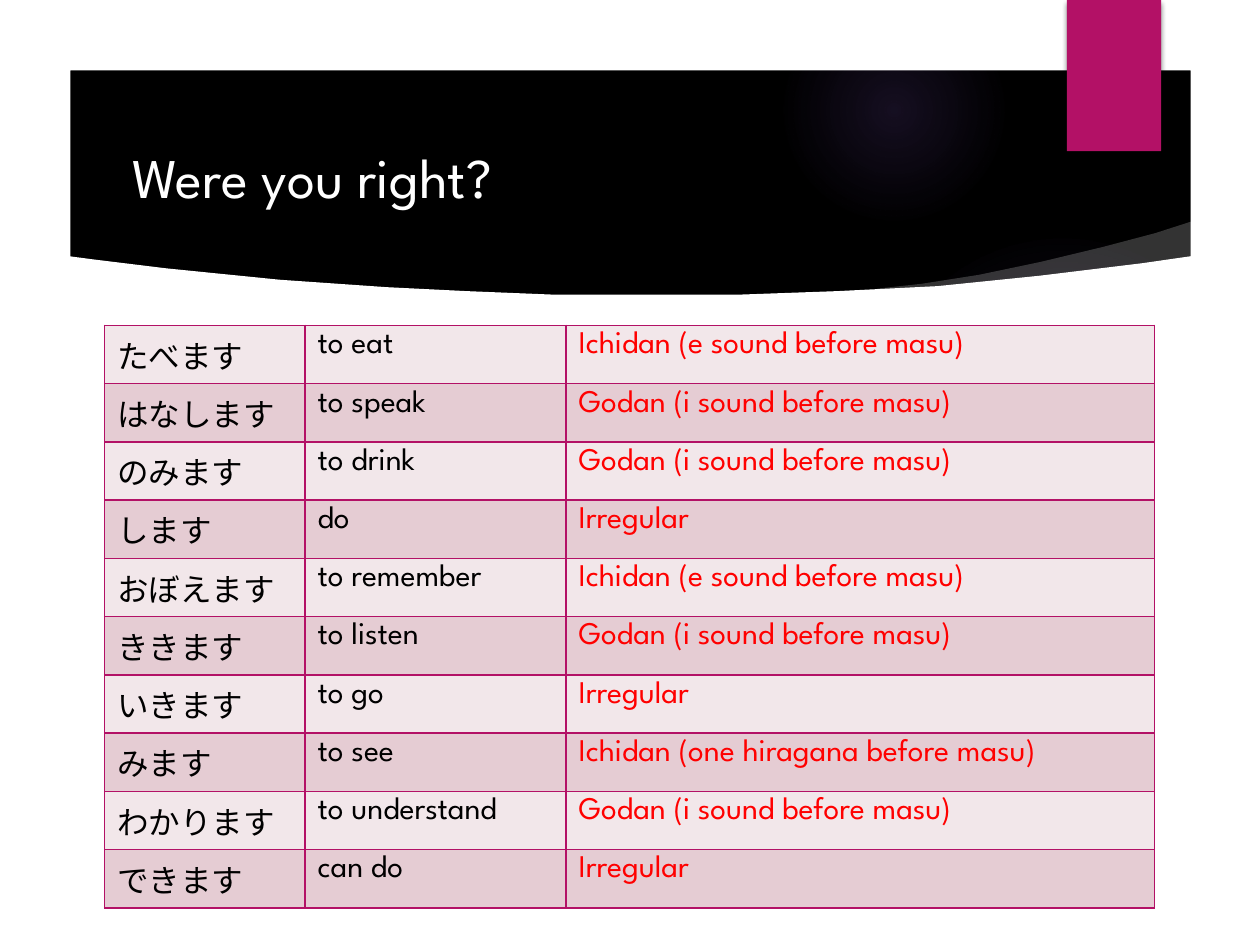
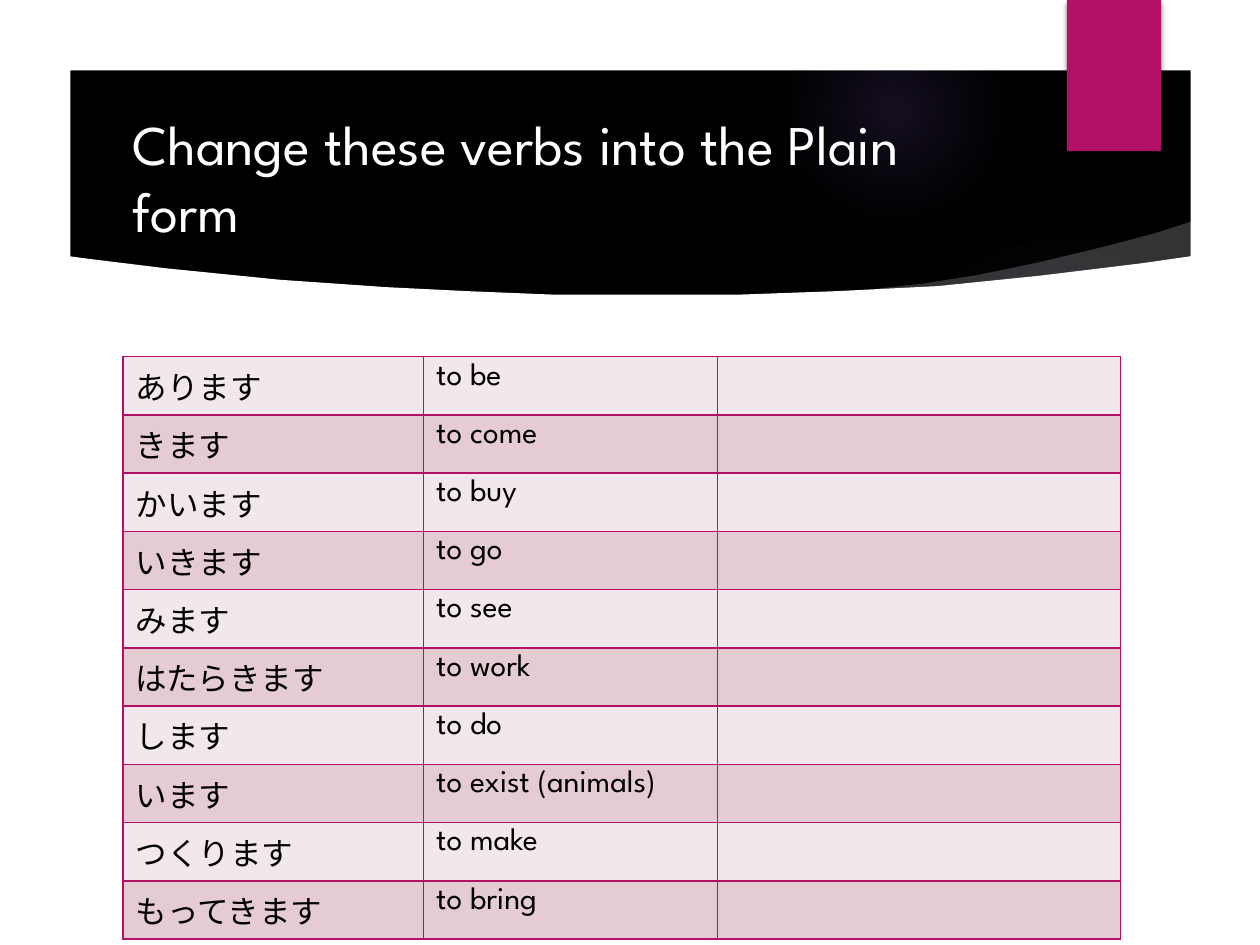
"""Build two Japanese verb slides: checked answers and a plain form exercise."""
from lxml import etree
from pptx import Presentation
from pptx.dml.color import RGBColor
from pptx.enum.shapes import MSO_SHAPE
from pptx.enum.text import MSO_ANCHOR, MSO_AUTO_SIZE, PP_ALIGN
from pptx.oxml.ns import qn
from pptx.util import Cm, Pt

OVAL, RECTANGLE = MSO_SHAPE.OVAL, MSO_SHAPE.RECTANGLE
MIDDLE, LEFT, NO_FIT = MSO_ANCHOR.MIDDLE, PP_ALIGN.LEFT, MSO_AUTO_SIZE.NONE

FONT = "League Spartan"
BLACK, WHITE, RED = "000000", "FFFFFF", "FF0000"
MAGENTA, VIOLET = "B31166", "9B6BF2"
ROW_FILLS = ("F2E7EA", "E5CCD3")
COLUMN_COLOURS = (BLACK, BLACK, RED)
ROW_HEIGHT = 1.17

ICHIDAN = "Ichidan (e sound before masu)"
GODAN = "Godan (i sound before masu)"
IRREGULAR = "Irregular"

SLIDES = [
    {
        "title": "Were you right?",
        "corner": (2.11, 6.56),
        "columns": (4.04, 5.26, 11.86),
        "verbs": [
            ("たべます", "to eat", ICHIDAN),
            ("はなします", "to speak", GODAN),
            ("のみます", "to drink", GODAN),
            ("します", "do", IRREGULAR),
            ("おぼえます", "to remember", ICHIDAN),
            ("ききます", "to listen", GODAN),
            ("いきます", "to go", IRREGULAR),
            ("みます", "to see", "Ichidan (one hiragana before masu)"),
            ("わかります", "to understand", GODAN),
            ("できます", "can do", IRREGULAR),
        ],
    },
    {
        "title": "Change these verbs into the Plain form",
        "corner": (2.48, 7.19),
        "columns": (6.06, 5.92, 8.13),
        "verbs": [
            ("あります", "to be", ""),
            ("きます", "to come", ""),
            ("かいます", "to buy", ""),
            ("いきます", "to go", ""),
            ("みます", "to see", ""),
            ("はたらきます", "to work", ""),
            ("します", "to do", ""),
            ("います", "to exist (animals)", ""),
            ("つくります", "to make", ""),
            ("もってきます", "to bring", ""),
        ],
    },
]

GLOWS = [
    ((17.5, 4.65, 7.82), ((0, 7), (36, 6), (69, 0), (100, 0))),
    ((15.8, 0, 4.45), ((0, 14), (36, 7), (73, 0), (100, 0))),
]
SHEEN = [(17.68, 5.82), (18.59, 5.72), (19.74, 5.54), (20.98, 5.28), (22.23, 4.98),
         (23.29, 4.7), (24.16, 4.42), (24.28, 5.28), (17.75, 5.94)]
PAGE = [(1.35, 5.16), (1.35, 17.75), (24.05, 17.75), (24.05, 5.16), (23.01, 5.31),
        (20.96, 5.56), (18.9, 5.77), (16.87, 5.87), (14.91, 5.94), (12.98, 5.94),
        (11.15, 5.94), (9.42, 5.87), (7.8, 5.79), (5.64, 5.64), (3.35, 5.41), (1.88, 5.23)]
FRAME_OUTER = [(0, 0), (0, 19.05), (25.4, 19.05), (25.4, 0)]
FRAME_INNER = [(24, 17.65), (1.42, 17.65), (1.42, 1.42), (24, 1.42)]


def rgb(value):
    return RGBColor.from_string(value)


def add_xml(parent, tag, **attributes):
    return etree.SubElement(parent, qn(tag), {k: str(v) for k, v in attributes.items()})


def add_colour(parent, colour, alpha=100):
    tone = add_xml(parent, "a:srgbClr", val=colour)
    add_xml(tone, "a:alpha", val=alpha * 1000)


def write(frame, text, size=18, colour=BLACK):
    paragraph = frame.paragraphs[0]
    paragraph.alignment = LEFT
    run = paragraph.add_run()
    run.text = text
    run.font.name, run.font.size = FONT, Pt(size)
    run.font.color.rgb = rgb(colour)


def paint(shape, colour):
    shape.shadow.inherit = False
    shape.line.fill.background()
    shape.fill.solid()
    shape.fill.fore_color.rgb = rgb(colour)
    return shape


def add_glow(shapes, place, stops):
    left, top, size = map(Cm, place)
    glow = paint(shapes.add_shape(OVAL, left, top, size, size), VIOLET)
    glow.fill.gradient()
    gradient = glow.element.find(".//" + qn("a:gradFill"))
    for child in list(gradient):
        gradient.remove(child)
    stop_list = add_xml(gradient, "a:gsLst")
    for position, alpha in stops:
        add_colour(add_xml(stop_list, "a:gs", pos=position * 1000), VIOLET, alpha)
    centre = add_xml(gradient, "a:path", path="circle")
    add_xml(centre, "a:fillToRect", l=50000, t=50000, r=50000, b=50000)
    return glow


def add_outline(shapes, *contours):
    builder = None
    for contour in contours:
        points = [(Cm(x), Cm(y)) for x, y in contour]
        if builder is None:
            builder = shapes.build_freeform(*points[0])
        else:
            builder.move_to(*points[0])
        builder.add_line_segments(points[1:], close=True)
    return paint(builder.convert_to_shape(), WHITE)


def decorate(layout, shapes):
    """Draw the curved band and the tab, then hand them to the layout."""
    layout.background.fill.solid()
    layout.background.fill.fore_color.rgb = rgb(BLACK)
    parts = [add_glow(shapes, *glow) for glow in GLOWS]
    sheen = add_outline(shapes, SHEEN)
    add_xml(sheen.element.find(".//" + qn("a:srgbClr")), "a:alpha", val=20000)
    page = add_outline(shapes, PAGE)
    frame = add_outline(shapes, FRAME_OUTER, FRAME_INNER)
    tab = paint(shapes.add_shape(RECTANGLE, Cm(21.51), 0, Cm(1.9), Cm(3.05)), MAGENTA)
    shadow = add_xml(tab.element.find(".//" + qn("a:effectLst")), "a:outerShdw",
                     blurRad=Pt(3), dist=Pt(2), dir=90 * 60000, rotWithShape=0)
    add_colour(shadow, BLACK, 45)
    for part in parts + [sheen, page, frame, tab]:
        layout.shapes.element.append(part.element)


def add_title(slide, text):
    title = slide.shapes.title
    title.left, title.top, title.width, title.height = map(Cm, (2.41, 2.57, 17.63, 1.98))
    frame = title.text_frame
    frame.word_wrap, frame.auto_size, frame.vertical_anchor = True, NO_FIT, MIDDLE
    write(frame, text, size=32, colour=WHITE)


def add_verbs(slide, corner, columns, verbs):
    left, top = map(Cm, corner)
    holder = slide.shapes.add_table(len(verbs), len(columns), left, top,
                                    Cm(sum(columns)), Cm(ROW_HEIGHT * len(verbs)))
    table = holder.table
    table.first_row = table.horz_banding = False
    for column, width in zip(table.columns, columns):
        column.width = Cm(width)
    for index, verb in enumerate(verbs):
        table.rows[index].height = Cm(ROW_HEIGHT)
        for cell, text, colour in zip(table.rows[index].cells, verb, COLUMN_COLOURS):
            cell.fill.solid()
            cell.fill.fore_color.rgb = rgb(ROW_FILLS[index % 2])
            if text:
                write(cell.text_frame, text, colour=colour)
    for properties in holder.element.iter(qn("a:tcPr")):
        for position, side in enumerate(("a:lnL", "a:lnR", "a:lnT", "a:lnB")):
            border = add_xml(properties, side, w=Pt(1))
            add_colour(add_xml(border, "a:solidFill"), MAGENTA)
            properties.insert(position, border)


def main():
    deck = Presentation()
    deck.slide_width, deck.slide_height = Cm(25.4), Cm(19.05)
    layout = deck.slide_layouts[5]
    for number, content in enumerate(SLIDES):
        slide = deck.slides.add_slide(layout)
        if number == 0:
            decorate(layout, slide.shapes)
        add_title(slide, content["title"])
        add_verbs(slide, content["corner"], content["columns"], content["verbs"])
    deck.save("out.pptx")


if __name__ == "__main__":
    main()
